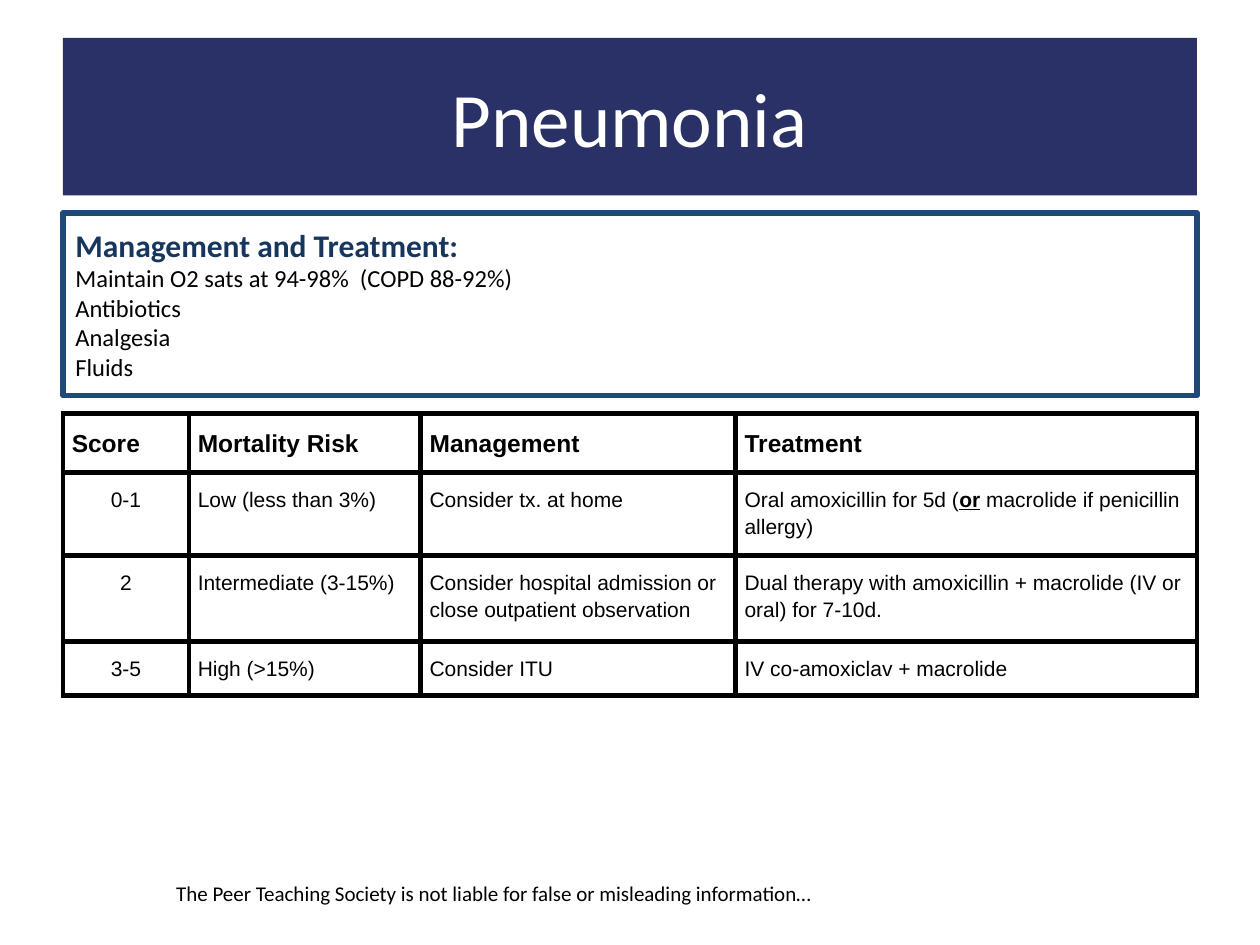
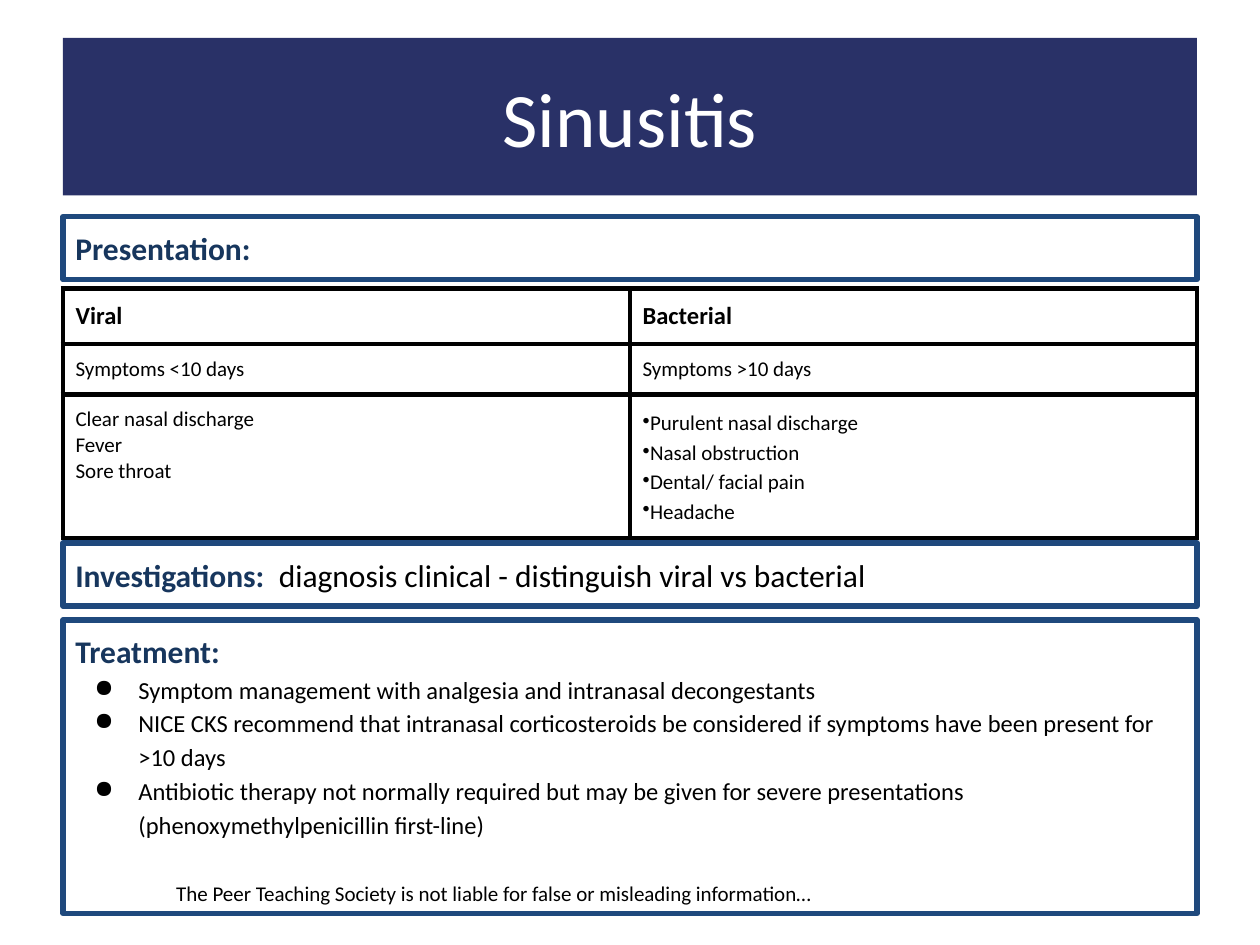
"""Builds two revision slides on pneumonia and sinusitis."""
import pptx
import pptx.dml.color
import pptx.enum.shapes
import pptx.enum.text
import pptx.oxml
import pptx.oxml.ns
import pptx.util
from pptx.util import Inches

RGBColor = pptx.dml.color.RGBColor
Align = pptx.enum.text.PP_ALIGN
Anchor = pptx.enum.text.MSO_ANCHOR

NAVY = RGBColor(0x29, 0x31, 0x67)
BLUE = RGBColor(0x1F, 0x49, 0x7D)
INK = RGBColor(0x17, 0x36, 0x5D)
BLACK = RGBColor(0, 0, 0)
WHITE = RGBColor(255, 255, 255)
LEFT, WIDTH = 0.5, 9
FOOTER = "The Peer Teaching Society is not liable for false or misleading information…"
BORDER = (
    '<a:{side} {ns} w="38100"><a:solidFill><a:srgbClr val="{color}"/>'
    "</a:solidFill></a:{side}>"
)


class Deck:
    def __init__(self):
        self.show = pptx.Presentation()
        self.show.slide_width = Inches(10)
        self.show.slide_height = Inches(7.5)

    def start(self, title):
        layout = self.show.slide_layouts[6]
        self.shapes = self.show.slides.add_slide(layout).shapes
        note = self.shapes.add_textbox(
            Inches(1.3), Inches(6.94), Inches(5.54), Inches(0.3)
        )
        note.text_frame.word_wrap = True
        self.put(note.text_frame, FOOTER, 12)
        band = self.panel(0.3, 1.25)
        band.fill.solid()
        band.fill.fore_color.rgb = NAVY
        band.line.fill.background()
        frame = band.text_frame
        frame.vertical_anchor = Anchor.MIDDLE
        self.put(frame, title, 44, WHITE, align=Align.CENTER)

    def panel(self, top, height):
        kind = pptx.enum.shapes.MSO_SHAPE.RECTANGLE
        shape = self.shapes.add_shape(
            kind, Inches(LEFT), Inches(top), Inches(WIDTH), Inches(height)
        )
        shape.shadow.inherit = False
        frame = shape.text_frame
        frame.word_wrap = True
        self.inset(frame, 0.1)
        return shape

    def inset(self, target, side):
        target.margin_left = target.margin_right = Inches(side)
        target.margin_top = target.margin_bottom = Inches(0.1)

    def box(self, top, height, head):
        shape = self.panel(top, height)
        shape.fill.background()
        shape.line.color.rgb = BLUE
        shape.line.width = pptx.util.Pt(3)
        frame = shape.text_frame
        frame.vertical_anchor = Anchor.TOP
        self.put(frame, head, 18, INK, True)
        return frame

    def put(self, frame, text, size, color=BLACK, bold=False, face="Calibri",
            align=Align.LEFT, space=None, mark=None, left=0, hang=0):
        par = frame.paragraphs[0]
        if par.runs:
            par = frame.add_paragraph()
        par.alignment = align
        par.line_spacing = space
        if mark:
            props = par._p.get_or_add_pPr()
            props.set("marL", str(Inches(left)))
            props.set("indent", str(-Inches(hang)))
            bullet = pptx.oxml.parse_xml(
                f'<a:buChar {pptx.oxml.ns.nsdecls("a")} char="{mark}"/>'
            )
            props.append(bullet)
        par.font.name = face
        par.font.size = pptx.util.Pt(size)
        par.font.color.rgb = color
        par.font.bold = bold
        for part in [text] if isinstance(text, str) else text:
            par.add_run().text = part
        return par

    def table(self, top, cols, rows, side):
        frame = self.shapes.add_table(
            len(rows), len(cols), Inches(LEFT), Inches(top),
            Inches(WIDTH), Inches(sum(rows))
        )
        grid = frame.table
        grid.first_row = grid.horz_banding = False
        for col, width in zip(grid.columns, cols):
            col.width = Inches(width)
        for row, height in zip(grid.rows, rows):
            row.height = Inches(height)
        for cell in grid.iter_cells():
            self.inset(cell, side)
            props = cell._tc.get_or_add_tcPr()
            for edge in ("lnL", "lnR", "lnT", "lnB"):
                props.append(pptx.oxml.parse_xml(BORDER.format(
                    side=edge, ns=pptx.oxml.ns.nsdecls("a"), color=BLACK
                )))
            cell.fill.background()
        return grid


def lungs(deck):
    deck.start("Pneumonia")
    frame = deck.box(1.69, 1.45, "Management and Treatment:")
    for line in ("Maintain O2 sats at 94-98%  (COPD 88-92%)", "Antibiotics",
                 "Analgesia", "Fluids"):
        deck.put(frame, line, 14)
    rows = [
        ("Score", "Mortality Risk", "Management", "Treatment"),
        ("0-1", "Low (less than 3%)", "Consider tx. at home",
         ("Oral amoxicillin for 5d (", "or", " macrolide if penicillin allergy)")),
        ("2", "Intermediate (3-15%)",
         "Consider hospital admission or close outpatient observation",
         "Dual therapy with amoxicillin + macrolide (IV or oral) for 7-10d."),
        ("3-5", "High (>15%)", "Consider ITU", "IV co-amoxiclav + macrolide"),
    ]
    grid = deck.table(3.28, (1, 1.84, 2.5, 3.66), (0.47, 0.66, 0.68, 0.43), 0.07)
    for i, row in enumerate(rows):
        for j, text in enumerate(row):
            par = deck.put(
                grid.cell(i, j).text_frame, text, 12 if i else 14, bold=i == 0,
                face="Arial", space=1.15,
                align=Align.CENTER if i and j == 0 else Align.LEFT
            )
            if len(par.runs) > 1:
                par.runs[1].font.bold = par.runs[1].font.underline = True


def sinus(deck):
    deck.start("Sinusitis")
    grid = deck.table(2.29, (4.5, 4.5), (0.44, 0.4, 1.14), 0.1)
    for j, (head, days) in enumerate((("Viral", "<"), ("Bacterial", ">"))):
        deck.put(grid.cell(0, j).text_frame, head, 14, bold=True)
        deck.put(grid.cell(1, j).text_frame, f"Symptoms {days}10 days", 12)
    for sign in ("Clear nasal discharge", "Fever", "Sore throat"):
        deck.put(grid.cell(2, 0).text_frame, sign, 12)
    for sign in ("Purulent nasal discharge", "Nasal obstruction",
                 "Dental/ facial pain", "Headache"):
        deck.put(grid.cell(2, 1).text_frame, sign, 12, space=1.15, mark="•")
    deck.box(1.72, 0.5, "Presentation:")
    frame = deck.box(4.31, 0.5, (
        "Investigations:  ", "diagnosis clinical - distinguish viral vs bacterial"
    ))
    plain = frame.paragraphs[0].runs[1].font
    plain.bold = False
    plain.color.rgb = BLACK
    frame = deck.box(4.92, 2.33, "Treatment:")
    for line in (
        "Symptom management with analgesia and intranasal decongestants",
        "NICE CKS recommend that intranasal corticosteroids be considered "
        "if symptoms have been present for >10 days",
        "Antibiotic therapy not normally required but may be given for severe "
        "presentations (phenoxymethylpenicillin first-line)",
    ):
        deck.put(frame, line, 14, space=1.15, mark="●", left=0.5, hang=0.35)


def main():
    deck = Deck()
    lungs(deck)
    sinus(deck)
    deck.show.save("out.pptx")


if __name__ == "__main__":
    main()
